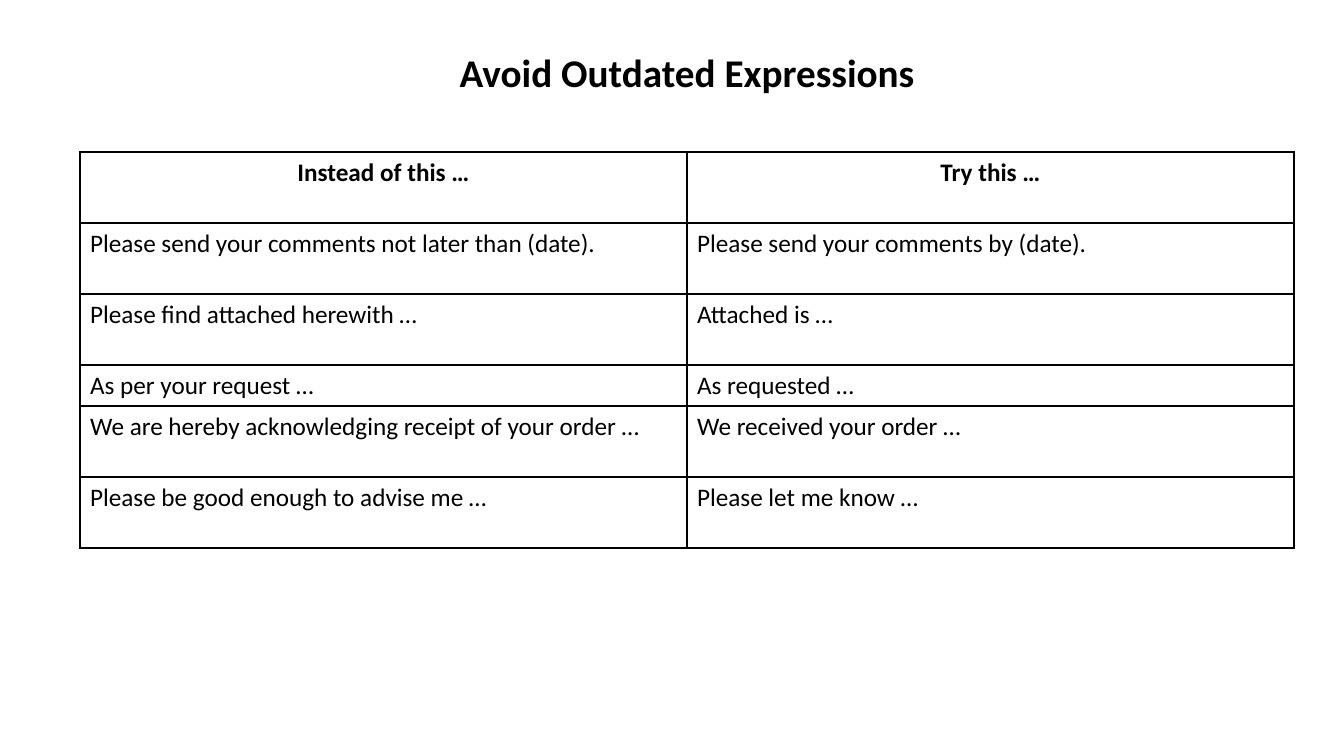
from lxml import etree
from pptx import Presentation
from pptx.dml.color import RGBColor
from pptx.enum.text import MSO_ANCHOR, MSO_AUTO_SIZE, PP_ALIGN
from pptx.oxml.ns import qn
from pptx.util import Pt

LEFT, CENTER = PP_ALIGN.LEFT, PP_ALIGN.CENTER
TOP, MIDDLE = MSO_ANCHOR.TOP, MSO_ANCHOR.MIDDLE
GROW = MSO_AUTO_SIZE.SHAPE_TO_FIT_TEXT

BLACK = RGBColor(0x00, 0x00, 0x00)
FONT = "Calibri"
EMU_PER_PX = 914400 / 100.8
SLIDE_W, SLIDE_H = 1344, 756
TITLE_ONLY = 5

EXPRESSIONS = [
    ("Instead of this …", "Try this …"),
    ("Please send your comments not later than (date).",
     "Please send your comments by (date)."),
    ("Please find attached herewith …", "Attached is …"),
    ("As per your request …", "As requested …"),
    ("We are hereby acknowledging receipt of your order …",
     "We received your order …"),
    ("Please be good enough to advise me …", "Please let me know …"),
]
TALL, SHORT = 71, 41
ROW_HEIGHTS = [TALL, TALL, TALL, SHORT, TALL, TALL]
COL_WIDTH = 607


def px(n):
    return round(n * EMU_PER_PX)


def write(tf, text, size=18, bold=False, align=LEFT, color=BLACK):
    p = tf.paragraphs[0]
    p.alignment = align
    r = p.add_run()
    r.text = text
    r.font.name = FONT
    r.font.size = Pt(size)
    r.font.bold = bold
    r.font.color.rgb = color


def set_borders(cell, color=BLACK, width=1):
    tcPr = cell._tc.get_or_add_tcPr()
    for side in ("lnL", "lnR", "lnT", "lnB"):
        ln = etree.SubElement(tcPr, qn(f"a:{side}"), w=str(Pt(width)))
        fill = etree.SubElement(ln, qn("a:solidFill"))
        etree.SubElement(fill, qn("a:srgbClr"), val=str(color))


class SlideBuilder:
    def __init__(self, prs):
        self.s = prs.slides.add_slide(prs.slide_layouts[TITLE_ONLY])

    def title(self, text, x, y, w, h):
        sp = self.s.shapes.title
        sp.left, sp.top, sp.width, sp.height = map(px, (x, y, w, h))
        tf = sp.text_frame
        tf.word_wrap = True
        tf.auto_size = GROW
        tf.vertical_anchor = MIDDLE
        write(tf, text, size=28, bold=True, align=CENTER)

    def table(self, rows, x, y, col_width, row_heights):
        """Add a plain bordered table whose first row is a bold header."""
        cols = len(rows[0])
        table = self.s.shapes.add_table(
            len(rows), cols, px(x), px(y),
            px(col_width * cols), px(sum(row_heights))).table
        table.first_row = table.horz_banding = False
        for col in table.columns:
            col.width = px(col_width)
        for i, (texts, height) in enumerate(zip(rows, row_heights)):
            table.rows[i].height = px(height)
            header = i == 0
            for j, text in enumerate(texts):
                cell = table.cell(i, j)
                cell.vertical_anchor = TOP
                set_borders(cell)
                cell.fill.background()
                write(cell.text_frame, text, bold=header,
                      align=CENTER if header else LEFT)


def main():
    prs = Presentation()
    prs.slide_width, prs.slide_height = px(SLIDE_W), px(SLIDE_H)
    slide = SlideBuilder(prs)
    slide.title("Avoid Outdated Expressions", 253, 43, 868, 58)
    slide.table(EXPRESSIONS, 80, 152, COL_WIDTH, ROW_HEIGHTS)
    prs.save("out.pptx")


if __name__ == "__main__":
    main()
